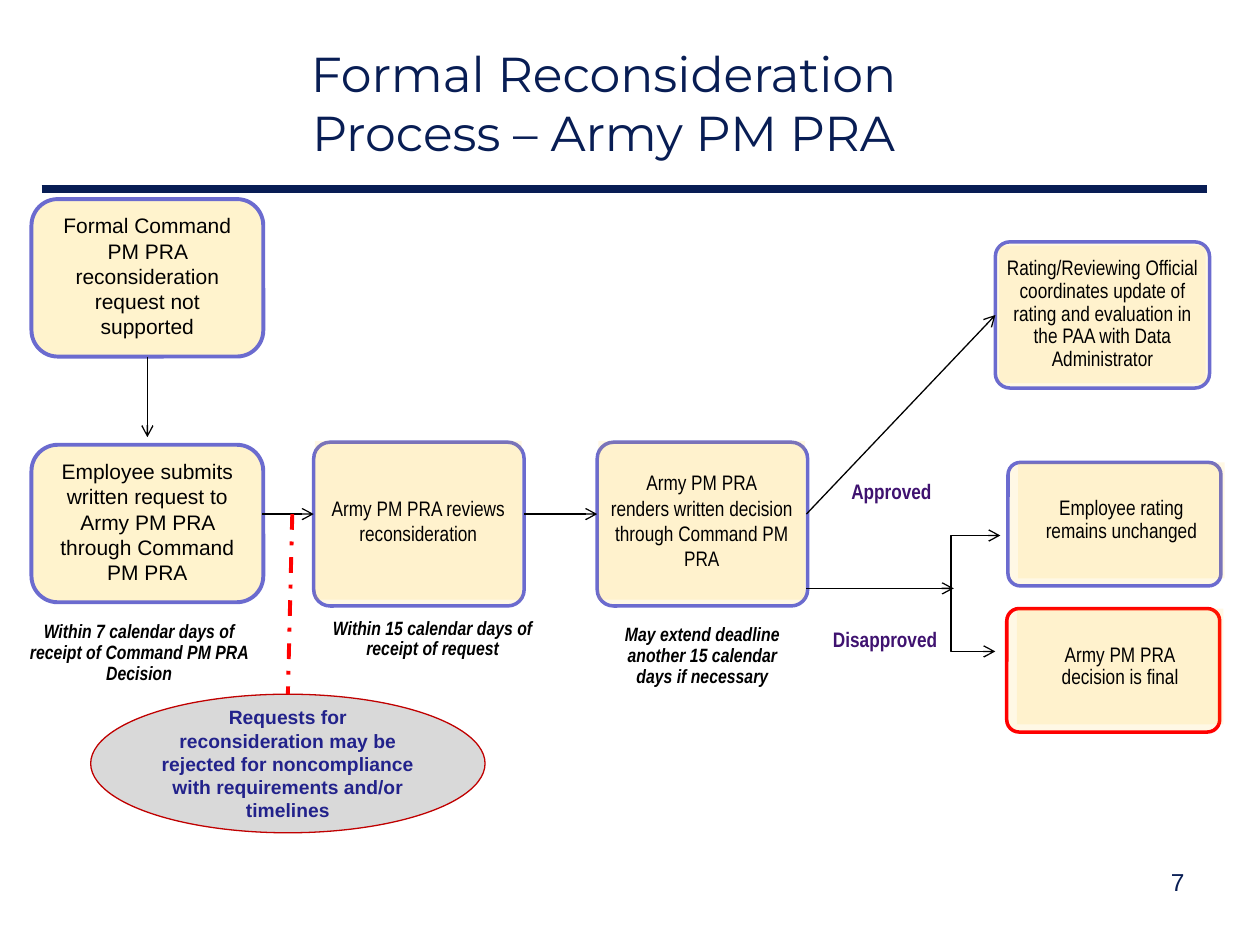
from dataclasses import dataclass

from lxml import etree
from pptx import Presentation
from pptx import util as u
from pptx.dml.color import RGBColor
from pptx.enum import dml, shapes, text
from pptx.oxml.ns import qn


@dataclass(frozen=True)
class Theme:
    """Colours, fonts and type sizes of the slide."""
    navy: str = "081D54"
    black: str = "000000"
    white: str = "FFFFFF"
    violet: str = "6B6BCF"
    red: str = "FF0000"
    amber: str = "FFC000"
    cream: str = "FFF3CD"
    grey: str = "D9D9D9"
    crimson: str = "C00000"
    indigo: str = "22228B"
    purple: str = "3F1270"
    heading: str = "Montserrat"
    body: str = "Arial"
    narrow: str = "Arial Narrow"
    title_size: int = 28
    number_size: int = 14
    body_size: int = 12
    note_size: int = 11


THEME = Theme()
SHAPE = shapes.MSO_SHAPE
CENTER = text.PP_ALIGN.CENTER
TOP, MIDDLE = text.MSO_ANCHOR.TOP, text.MSO_ANCHOR.MIDDLE


def write(shape, lines, size=THEME.body_size, font=THEME.narrow, color=THEME.black, bold=None,
          italic=None, align=CENTER, anchor=TOP, inset=None, spacing=None, after=None):
    """Fill a shape with uniformly styled paragraphs."""
    frame = shape.text_frame
    frame.word_wrap, frame.vertical_anchor = True, anchor
    if inset is not None:
        frame.margin_left = frame.margin_right = u.Inches(inset)
        frame.margin_top = frame.margin_bottom = u.Inches(inset)
    frame.text = "\n".join(lines)
    for paragraph in frame.paragraphs:
        paragraph.alignment = align
        paragraph.line_spacing = spacing
        paragraph.space_after = after
        style = paragraph.font
        style.size, style.name, style.bold, style.italic = u.Pt(size), font, bold, italic
        style.color.rgb = RGBColor.from_string(color)


def label(slide, box, lines, **style):
    """Add a text box."""
    write(slide.shapes.add_textbox(*map(u.Inches, box)), lines, **style)


def panel(slide, kind, box, fill, line=None, width=2, alpha=None, corner=None):
    """Add a flat preset shape and return it."""
    shape = slide.shapes.add_shape(kind, *map(u.Inches, box))
    shape.shadow.inherit = False
    shape.fill.solid()
    shape.fill.fore_color.rgb = RGBColor.from_string(fill)
    if alpha is not None:
        tint = shape.fill._xPr.find(qn("a:solidFill"))[0]
        etree.SubElement(tint, qn("a:alpha"), val=str(alpha * 1000))
    if line:
        shape.line.color.rgb = RGBColor.from_string(line)
        shape.line.width = u.Pt(width)
    else:
        shape.line.fill.background()
    if corner is not None:
        shape.adjustments[0] = corner
    return shape


def connect(slide, start, end, color=THEME.black, width=0.75, ends=("tailEnd",),
            kind=shapes.MSO_CONNECTOR.STRAIGHT, dash=None):
    """Add a connector with open arrowheads at the named ends."""
    link = slide.shapes.add_connector(kind, *map(u.Inches, (*start, *end)))
    link.line.color.rgb = RGBColor.from_string(color)
    link.line.width = u.Pt(width)
    if dash:
        link.line.dash_style = dash
    outline = link.line._get_or_add_ln()
    for end_name in ends:
        etree.SubElement(outline, qn(f"a:{end_name}"), type="arrow")
    etree.SubElement(link._element.spPr, qn("a:effectLst"))
    return link


def card(slide, box, inner, lines, line=THEME.violet, **style):
    """Add a tinted rounded frame with a tinted text area, and return the frame."""
    left, top, _, _ = box
    dx, dy, width, height = inner
    frame = panel(slide, SHAPE.ROUNDED_RECTANGLE, box, THEME.amber, line, alpha=10, corner=0.1)
    area = panel(slide, SHAPE.RECTANGLE, (left + dx, top + dy, width, height),
                 THEME.amber, alpha=10)
    write(area, lines, anchor=MIDDLE, inset=0.01, **style)
    return frame


def caption(slide, box, wording):
    """Add a bold italic deadline note."""
    note = panel(slide, SHAPE.ROUNDED_RECTANGLE, box, THEME.white)
    write(note, [wording], size=THEME.note_size, bold=True, italic=True,
          spacing=0.9, after=u.Pt(4))


def header(slide, box):
    """Add the title and the rule below it."""
    left, top, width, height = box
    label(slide, (left + 1.5, top, 5.92, 1.22), ["Formal Reconsideration Process – Army PM PRA"],
          size=THEME.title_size, font=THEME.heading, color=THEME.navy, anchor=MIDDLE)
    connect(slide, (left, top + height), (left + width, top + height), THEME.navy, 4.5, ends=())


def request_column(slide, box):
    """Add the unsupported request, the employee's new request and its deadline."""
    left, top, width, height = box
    gap = 1.95
    wordings = ("Formal Command PM PRA reconsideration request not supported",
                "Employee submits written request to Army PM PRA through Command PM PRA")
    steps = []
    for row, wording in enumerate(wordings):
        step = panel(slide, SHAPE.ROUNDED_RECTANGLE, (left, top + row * gap, width, 1.25),
                     THEME.cream, THEME.violet, 2.25, corner=0.167)
        write(step, [wording], font=THEME.body)
        steps.append(step)
    middle = left + width / 2
    down = connect(slide, (middle, top + 1.25), (middle, top + gap - 0.06))
    down.begin_connect(steps[0], 2)
    caption(slide, (left - 0.18, top + height - 0.56, 2.07, 0.56),
            "Within 7 calendar days of receipt of Command PM PRA Decision")


def review_row(slide, box):
    """Add the review and decision cards, their deadlines and the arrows into them."""
    left, top, width, _ = box
    card_width, card_height = 1.67, 1.3
    decision = left + width - card_width
    inner = (0.01, -0.01, 1.64, 1.26)
    card(slide, (left, top, card_width, card_height), inner,
         ["Army PM PRA reviews", "reconsideration"])
    card(slide, (decision, top, card_width, card_height), inner,
         ["Army PM PRA", "renders written decision through Command PM PRA"])
    caption(slide, (left - 0.09, top + 1.32, 2.07, 0.62),
            "Within 15 calendar days of receipt of request")
    caption(slide, (decision, top + 1.37, card_width, 0.62),
            "May extend deadline another 15 calendar days if necessary")
    arrow_y = top + 0.57
    connect(slide, (left - 0.41, arrow_y), (left, arrow_y))
    connect(slide, (left + card_width, arrow_y), (decision, arrow_y))


def outcomes(slide, box):
    """Add the approved and disapproved branches with their result cards."""
    left, top, _, _ = box
    approved = card(slide, (left + 1.5, top, 1.7, 1.16), (0.03, 0.03, 1.64, 1.09),
                    ["Rating/Reviewing Official coordinates update of rating and evaluation "
                     "in the PAA with Data Administrator"], spacing=0.9, after=u.Pt(4))
    inner = (0.08, 0, 1.64, 0.92)
    card(slide, (left + 1.6, top + 1.75, 1.69, 0.98), inner,
         ["Employee rating", "remains unchanged"], spacing=0.9)
    card(slide, (left + 1.59, top + 2.91, 1.69, 0.98), inner,
         ["Army PM PRA", "decision is final"], line=THEME.red, spacing=0.9)
    rise = connect(slide, (left, top + 2.16), (left + 1.5, top + 0.58))
    rise.end_connect(approved, 1)
    connect(slide, (left, top + 2.75), (left + 1.17, top + 2.75))
    fork = connect(slide, (left + 1.54, top + 2.33), (left + 1.5, top + 3.25),
                   ends=("headEnd", "tailEnd"), kind=shapes.MSO_CONNECTOR.ELBOW)
    bend = fork._element.spPr.find(qn("a:prstGeom")).get_or_add_avLst()
    etree.SubElement(bend, qn("a:gd"), name="adj1", fmla="val 975000")
    for wording, dx, dy, width in (("Approved", 0.17, 1.83, 1.01), ("Disapproved", 0, 3, 1.25)):
        label(slide, (left + dx, top + dy, width, 0.3), [wording],
              color=THEME.purple, bold=True)


def rejection_note(slide, box):
    """Add the rejection warning and its dashed leader."""
    left, top, width, _ = box
    warning = panel(slide, SHAPE.OVAL, box, THEME.grey, THEME.crimson, 0.75)
    write(warning, ["Requests for reconsideration may be rejected for noncompliance "
                    "with requirements and/or timelines"], size=THEME.note_size,
          font=THEME.body, color=THEME.indigo, bold=True, anchor=MIDDLE)
    leader = connect(slide, (left + 1.6, top - 1.43), (left + width / 2, top), THEME.red, 2.25,
                     ends=(), dash=dml.MSO_LINE.DASH_DOT)
    leader.end_connect(warning, 0)


def main():
    """Build and save the slide."""
    deck = Presentation()
    deck.slide_width, deck.slide_height = u.Inches(10), u.Inches(7.5)
    slide = deck.slides.add_slide(deck.slide_layouts[6])
    header(slide, (0.33, 0.2, 9.25, 1.3))
    request_column(slide, (0.25, 1.58, 1.84, 3.84))
    review_row(slide, (2.49, 3.51, 3.92, 1.99))
    outcomes(slide, (6.4, 1.92, 3.29, 3.89))
    rejection_note(slide, (0.72, 5.51, 3.13, 1.1))
    label(slide, (7.17, 6.83, 2.33, 0.52), ["7"], size=THEME.number_size, font=THEME.body,
          color=THEME.navy, align=text.PP_ALIGN.RIGHT)
    deck.save("out.pptx")


if __name__ == "__main__":
    main()
